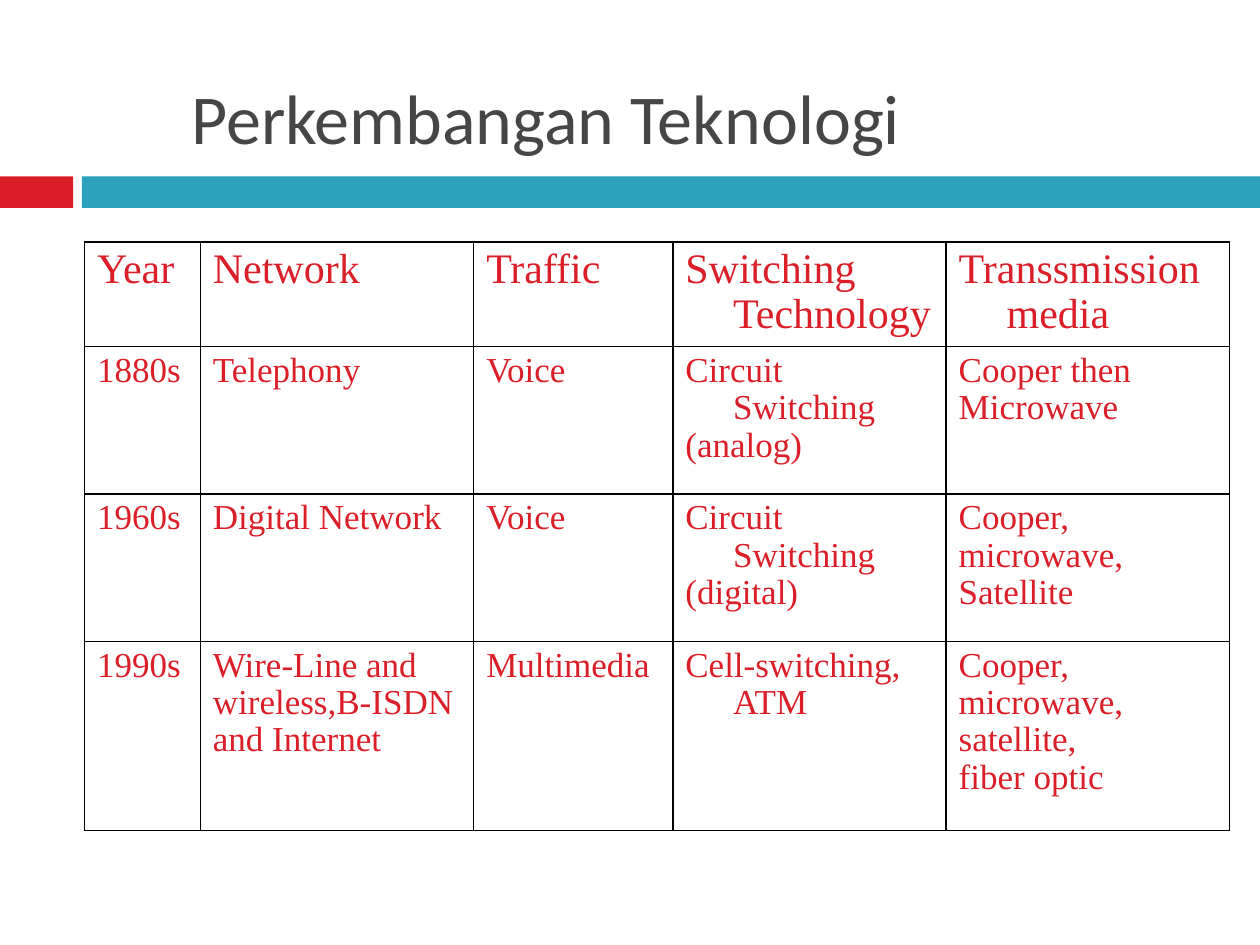
from dataclasses import dataclass

from lxml import etree
from pptx import Presentation
from pptx.dml.color import RGBColor
from pptx.enum import shapes, text
from pptx.oxml import ns
from pptx.util import Inches, Pt


@dataclass(frozen=True)
class Theme:
    """Colours, fonts and type sizes of the slide."""
    red: str = "DA1F28"
    teal: str = "2DA2BF"
    grey: str = "464646"
    black: str = "000000"
    title_font: str = "Calibri"
    table_font: str = "Times New Roman"
    title_size: int = 40
    header_size: int = 24
    body_size: int = 20
    hanging: float = 0.38
    line_spacing: float = 0.96


THEME = Theme()
COLUMN_WIDTHS = [0.92, 2.17, 1.58, 2.17, 2.25]
ROW_HEIGHTS = [0.83, 1.17, 1.17, 1.5]
HISTORY = [
    ["Year", "Network", "Traffic", "Switching Technology", "Transsmission media"],
    ["1880s", "Telephony", "Voice", "Circuit Switching\n(analog)",
     "Cooper then\nMicrowave"],
    ["1960s", "Digital Network", "Voice", "Circuit Switching\n(digital)",
     "Cooper,\nmicrowave,\nSatellite"],
    ["1990s", "Wire-Line and\nwireless,B-ISDN\nand Internet", "Multimedia",
     "Cell-switching, ATM", "Cooper,\nmicrowave,\nsatellite,\nfiber optic"],
]


def write(frame, content, *, size, font, color, align, hanging=0, spacing=1.0):
    """Fill a text frame, one paragraph to each line of content."""
    frame.text = content
    for paragraph in frame.paragraphs:
        paragraph.alignment = align
        paragraph.line_spacing = spacing
        if hanging:
            properties = paragraph._p.get_or_add_pPr()
            properties.set("marL", str(Inches(hanging)))
            properties.set("indent", str(-Inches(hanging)))
        for run in paragraph.runs:
            run.font.size = Pt(size)
            run.font.name = font
            run.font.color.rgb = RGBColor.from_string(color)


def add_bar(slide, left, width, color):
    """Draw one part of the band under the title."""
    bar = slide.shapes.add_shape(shapes.MSO_SHAPE.RECTANGLE, Inches(left),
                                 Inches(1.4), Inches(width), Inches(0.25))
    bar.shadow.inherit = False
    bar.fill.solid()
    bar.fill.fore_color.rgb = RGBColor.from_string(color)
    bar.line.fill.background()


def add_title(slide, content):
    """Place and format the title placeholder."""
    title = slide.shapes.title
    title.left, title.top = Inches(1.42), Inches(0.3)
    title.width, title.height = Inches(8.08), Inches(1.25)
    title.text_frame.vertical_anchor = text.MSO_ANCHOR.MIDDLE
    write(title.text_frame, content, size=THEME.title_size, font=THEME.title_font,
          color=THEME.grey, align=text.PP_ALIGN.LEFT)


def border_cell(cell):
    """Give a cell a thin line on every side and no fill."""
    properties = cell._tc.get_or_add_tcPr()
    for side in ("a:lnL", "a:lnR", "a:lnT", "a:lnB"):
        line = etree.SubElement(properties, ns.qn(side), w=str(Pt(1)))
        fill = etree.SubElement(line, ns.qn("a:solidFill"))
        etree.SubElement(fill, ns.qn("a:srgbClr"), val=THEME.black)
    cell.fill.background()


def add_history(slide):
    """Build the table of network generations."""
    table = slide.shapes.add_table(
        len(ROW_HEIGHTS), len(COLUMN_WIDTHS), Inches(0.67), Inches(1.92),
        Inches(sum(COLUMN_WIDTHS)), Inches(sum(ROW_HEIGHTS))).table
    table.first_row = table.horz_banding = False
    for column, width in zip(table.columns, COLUMN_WIDTHS):
        column.width = Inches(width)
    for index, (row, height, entries) in enumerate(
            zip(table.rows, ROW_HEIGHTS, HISTORY)):
        row.height = Inches(height)
        size = THEME.body_size if index else THEME.header_size
        for cell, entry in zip(row.cells, entries):
            border_cell(cell)
            write(cell.text_frame, entry, size=size, font=THEME.table_font,
                  color=THEME.red, align=text.PP_ALIGN.JUSTIFY,
                  hanging=THEME.hanging, spacing=THEME.line_spacing)


def main():
    """Build and save the slide."""
    deck = Presentation()
    deck.slide_width, deck.slide_height = Inches(10), Inches(7.5)
    slide = deck.slides.add_slide(deck.slide_layouts[5])
    add_bar(slide, 0, 0.58, THEME.red)
    add_bar(slide, 0.65, 9.35, THEME.teal)
    add_title(slide, "Perkembangan Teknologi")
    add_history(slide)
    deck.save("out.pptx")


if __name__ == "__main__":
    main()
